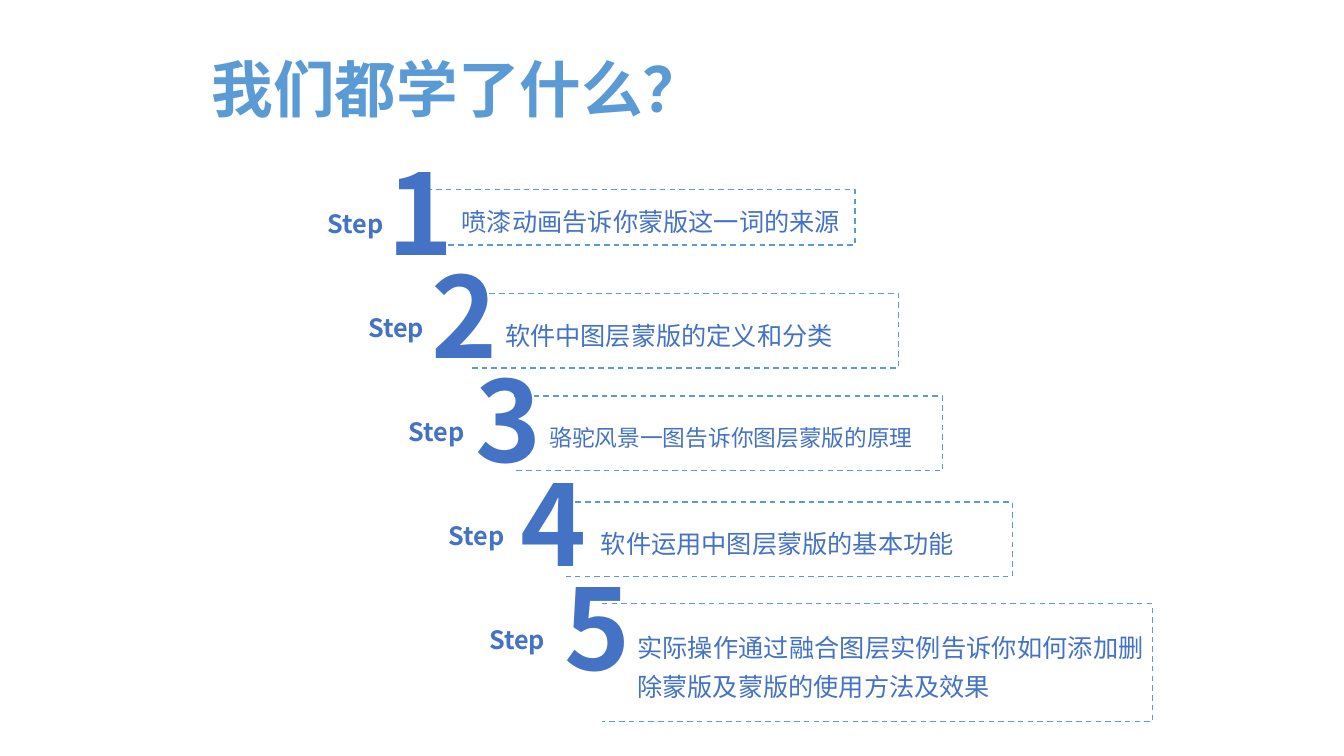
import pptx
import pptx.dml.color
import pptx.enum.dml
import pptx.enum.text
import pptx.oxml.ns
import pptx.util
from lxml import etree

Inches = pptx.util.Inches
ALIGN = pptx.enum.text.PP_ALIGN

COLORS = {"title": "5B9BD5", "outline": "5B9BD5", "text": "4472C4"}
SANS = "Noto Sans CJK SC"
DIGIT = "Noto Sans CJK JP"

# Text, point size, and the left, top, width and height of each dashed box
STEPS = [
    ("喷漆动画告诉你蒙版这一词的来源", 18, (4.23, 1.88, 4.25, 0.55)),
    ("软件中图层蒙版的定义和分类", 18, (4.66, 2.91, 4.25, 0.74)),
    ("骆驼风景一图告诉你图层蒙版的原理", 16.2, (5.10, 3.93, 4.25, 0.74)),
    ("软件运用中图层蒙版的基本功能", 18, (5.61, 4.98, 4.43, 0.74)),
    ("实际操作通过融合图层实例告诉你如何添加删除蒙版及蒙版的使用方法及效果",
     18, (5.97, 5.99, 5.46, 1.17)),
]


def rgb(name):
    return pptx.dml.color.RGBColor.from_string(COLORS[name])


def write(sp, text, size, font, color="text", bold=False,
          align=ALIGN.LEFT, spacing=0.9, insets=(0.1, 0.05, 0.1, 0.05)):
    """Put one formatted run into a shape, centred vertically."""
    tf = sp.text_frame
    tf.word_wrap = True
    tf.vertical_anchor = pptx.enum.text.MSO_ANCHOR.MIDDLE
    (tf.margin_left, tf.margin_top,
     tf.margin_right, tf.margin_bottom) = map(Inches, insets)
    p = tf.paragraphs[0]
    p.alignment = align
    p.line_spacing = spacing
    r = p.add_run()
    r.text = text
    r.font.size = pptx.util.Pt(size)
    r.font.bold = bold
    r.font.name = font
    r.font.color.rgb = rgb(color)
    # East Asian typeface
    ea = etree.SubElement(r.font._element, pptx.oxml.ns.qn("a:ea"))
    ea.set("typeface", font if font != "Calibri" else SANS)


def add_text(shapes, box, text, size, font, **style):
    sp = shapes.add_textbox(*map(Inches, box))
    write(sp, text, size, font, **style)


def add_open_box(shapes, box, text, size):
    """Dashed outline that stays open on its left side."""
    left, top, width, height = map(Inches, box)
    right, bottom = left + width, top + height
    builder = shapes.build_freeform(left, top)
    builder.add_line_segments(
        [(right, top), (right, bottom), (left, bottom)], close=False)
    sp = builder.convert_to_shape()
    sp.shadow.inherit = False
    sp.fill.background()
    sp.line.color.rgb = rgb("outline")
    sp.line.width = pptx.util.Pt(1)
    sp.line.dash_style = pptx.enum.dml.MSO_LINE.DASH
    write(sp, text, size, SANS, align=ALIGN.JUSTIFY, spacing=1.3,
          insets=(0.35, 0.08, 0.08, 0.08))


def add_step(s, i, text, size, box):
    shapes = s.shapes.add_group_shape().shapes
    add_open_box(shapes, box, text, size)
    add_text(shapes, (3 + 0.4 * i, 1.88 + 1.03 * i, 1.06, 0.72), "Step", 18,
             SANS, bold=True, align=ALIGN.CENTER, insets=(0, 0, 0, 0))
    add_text(shapes, (3.74 + 0.44 * i, 1.25 + 1.03 * i, 0.81, 1.84),
             str(i + 1), 80, DIGIT, bold=True, align=ALIGN.CENTER)


def main():
    prs = pptx.Presentation()
    prs.slide_width, prs.slide_height = Inches(13.33), Inches(7.5)
    s = prs.slides.add_slide(prs.slide_layouts[6])

    # Title
    add_text(s.shapes, (2, 0.38, 8.62, 1.08), "我们都学了什么？", 44,
             "Calibri", color="title", bold=True)

    # Staircase of steps
    for i, (text, size, box) in enumerate(STEPS):
        add_step(s, i, text, size, box)

    prs.save("out.pptx")


if __name__ == "__main__":
    main()
